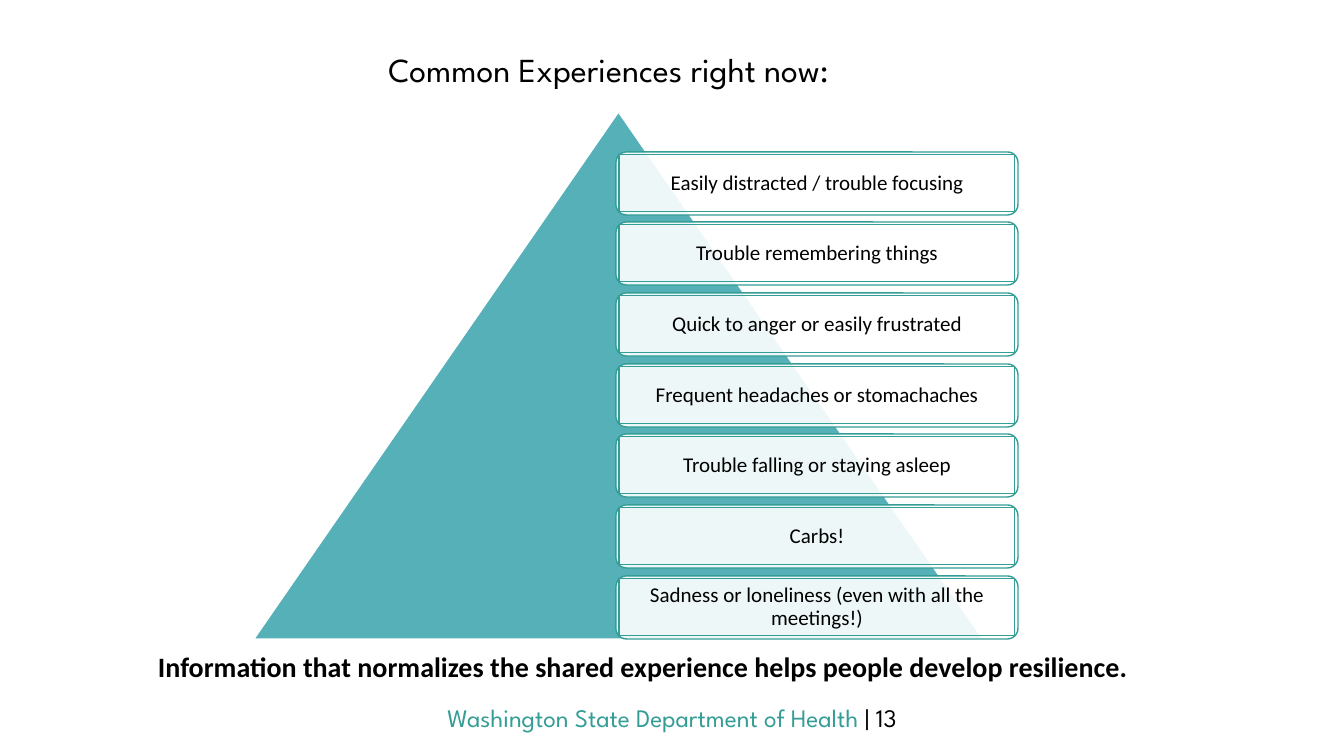
from lxml.etree import SubElement
from pptx import Presentation
from pptx.dml.color import RGBColor
from pptx.enum.shapes import MSO_SHAPE
from pptx.enum.text import MSO_ANCHOR, PP_ALIGN
from pptx.oxml.ns import qn
from pptx.util import Emu, Pt

SCALE = 914400 / 100.8
BLACK, WHITE, TEAL, AQUA = "000000", "FFFFFF", "349D96", "55B0B8"
HEAD, BODY = "League Spartan", "Calibri"
SIGNS = [
    "Easily distracted / trouble focusing",
    "Trouble remembering things",
    "Quick to anger or easily frustrated",
    "Frequent headaches or stomachaches",
    "Trouble falling or staying asleep",
    "Carbs!",
    "Sadness or loneliness (even with all the meetings!)",
]


def px(count):
    return Emu(round(count * SCALE))


def color(code):
    return RGBColor.from_string(code)


def write(frame, runs, size, font, align=PP_ALIGN.CENTER, space=1.0, before=0, bold=False):
    frame.word_wrap = True
    para = frame.paragraphs[0]
    para.alignment = align
    para.line_spacing = space
    para.space_before = Pt(before)
    for text, code in runs:
        run = para.add_run()
        run.text = text
        run.font.size = Pt(size)
        run.font.name = font
        run.font.bold = bold
        run.font.color.rgb = color(code)


def label(shapes, box, runs, size, font, **style):
    area = shapes.add_textbox(*map(px, box))
    write(area.text_frame, runs, size, font, **style)


def block(shapes, kind, box, fill, line, width, alpha=100):
    shape = shapes.add_shape(kind, *map(px, box))
    shape.shadow.inherit = False
    if fill:
        shape.fill.solid()
        shape.fill.fore_color.rgb = color(fill)
        if alpha < 100:
            tone = shape.fill._xPr.find(qn("a:solidFill"))[0]
            SubElement(tone, qn("a:alpha")).set("val", str(alpha * 1000))
    else:
        shape.fill.background()
    shape.line.color.rgb = color(line)
    shape.line.width = Pt(width)
    return shape


def card(shapes, top, text):
    group = shapes.add_group_shape().shapes
    block(group, MSO_SHAPE.ROUNDED_RECTANGLE, (616, top, 402, 63), WHITE, TEAL, 1, 90)
    inner = block(group, MSO_SHAPE.RECTANGLE, (619, top + 3, 396, 57), None, TEAL, 0.75)
    frame = inner.text_frame
    frame.vertical_anchor = MSO_ANCHOR.MIDDLE
    frame.margin_left = frame.margin_right = px(6)
    frame.margin_top = frame.margin_bottom = px(6)
    write(frame, [(text, BLACK)], 15, BODY, space=0.9)


def main():
    deck = Presentation()
    deck.slide_width, deck.slide_height = px(1344), px(756)
    shapes = deck.slides.add_slide(deck.slide_layouts[6]).shapes
    label(shapes, (0, 697, 1344, 40),
          [("Washington State Department of Health ", TEAL), ("| 13", BLACK)], 18, HEAD)
    label(shapes, (50, 40, 1117, 94), [("Common Experiences right now:", BLACK)],
          24, HEAD, space=1.1, before=10)
    label(shapes, (148, 641, 996, 69),
          [("Information that normalizes the shared experience helps people develop resilience.", BLACK)],
          20, BODY, align=PP_ALIGN.LEFT, space=1.1, before=10, bold=True)
    block(shapes, MSO_SHAPE.ISOSCELES_TRIANGLE, (254, 112, 729, 527), AQUA, WHITE, 1)
    for row, sign in enumerate(SIGNS):
        card(shapes, 152 + row * 424 // 6, sign)
    deck.save("out.pptx")


if __name__ == "__main__":
    main()
